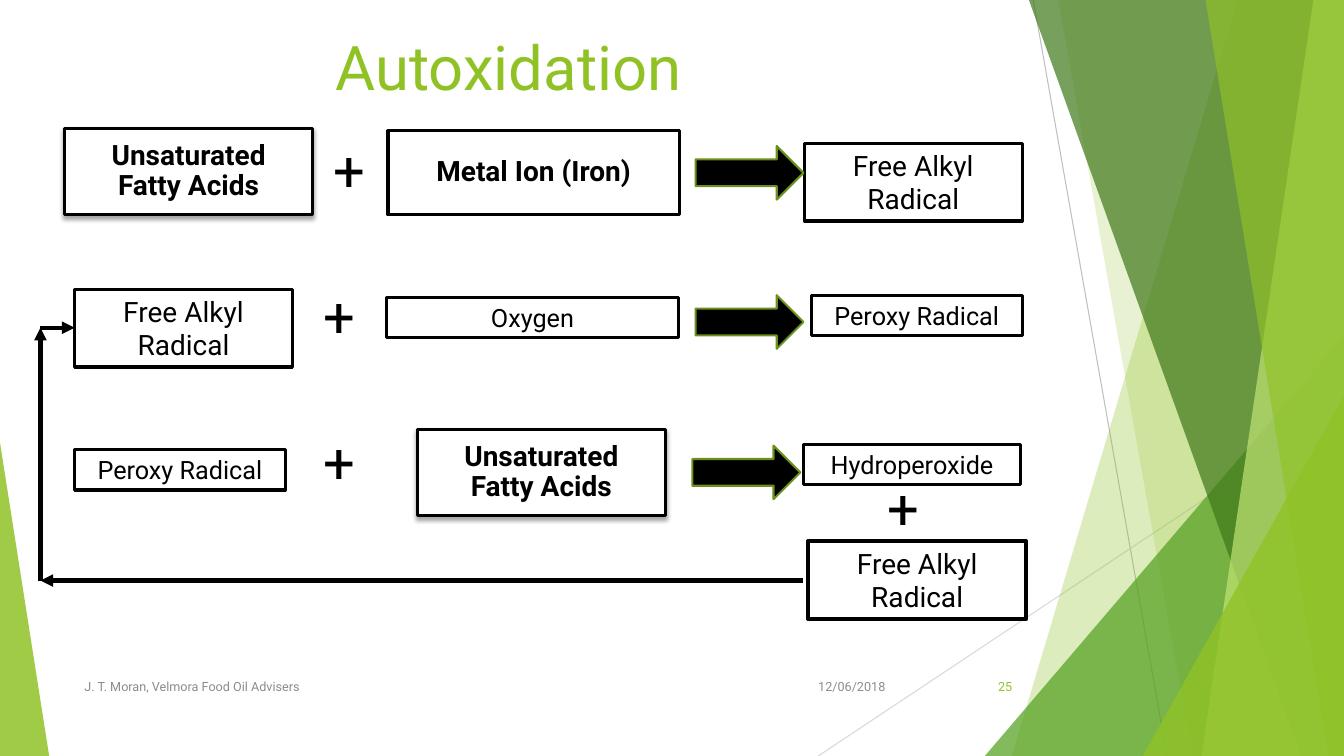
from lxml.etree import SubElement as Sub
from pptx import Presentation
from pptx.dml.color import RGBColor as Rgb
from pptx.enum.shapes import MSO_CONNECTOR as Link, MSO_SHAPE as Form
from pptx.enum.text import MSO_ANCHOR as Anchor, PP_ALIGN as Align
from pptx.oxml.ns import qn
from pptx.util import Cm, Pt

WIDE, HIGH = 33.87, 19.05
BLACK, WHITE, GREEN, GREY = "000000", "FFFFFF", "90C226", "8C8C8C"


def paint(part, tone, alpha=100):
    part.solid()
    part.fore_color.rgb = Rgb.from_string(tone)
    if alpha < 100:
        node = part._xPr.find(qn("a:solidFill"))[0]
        Sub(node, qn("a:alpha"), val=str(alpha * 1000))


def edge(line, tone, width):
    paint(line.fill, tone)
    line.width = Pt(width)


def place(slide, form, spot):
    shape = slide.shapes.add_shape(form, *map(Cm, spot))
    shape.shadow.inherit = False
    return shape


def write(shape, text, size, tone=BLACK, bold=False, align=Align.CENTER, anchor=Anchor.TOP):
    frame = shape.text_frame
    frame.text = text
    frame.word_wrap = True
    frame.vertical_anchor = anchor
    para = frame.paragraphs[0]
    para.alignment = align
    font = para.runs[0].font
    font.name, font.size, font.bold = "Roboto", Pt(size), bold
    font.color.rgb = Rgb.from_string(tone)


def label(slide, text, spot, size, tone=BLACK, align=Align.LEFT, anchor=Anchor.TOP):
    shape = slide.shapes.add_textbox(*map(Cm, spot))
    write(shape, text, size, tone, align=align, anchor=anchor)


def box(slide, text, spot, size=20, width=2.25, tone=BLACK, rim=BLACK):
    shape = place(slide, Form.RECTANGLE, spot)
    paint(shape.fill, WHITE)
    edge(shape.line, rim, width)
    write(shape, text, size, tone)
    return shape


def bold_box(slide, text, spot, shade=True):
    shape = box(slide, text, spot)
    write(shape, text, 20, bold=True, anchor=Anchor.MIDDLE)
    frame = shape.text_frame
    frame.margin_left = frame.margin_right = Cm(0.41)
    frame.margin_top = frame.margin_bottom = Cm(0.41)
    frame.paragraphs[0].line_spacing = 0.9
    if shade:
        list_ = shape._element.spPr.find(qn("a:effectLst"))
        cast = Sub(list_, qn("a:outerShdw"), blurRad=str(Pt(3)), dist=str(Pt(2)),
                   dir="5400000", rotWithShape="0")
        tint = Sub(cast, qn("a:srgbClr"), val=BLACK)
        Sub(tint, qn("a:alpha"), val="35000")


def plus(slide, left, top):
    label(slide, "+", (left, top, 0.99, 1.96), 40)


def arrow(slide, left, top):
    shape = place(slide, Form.RIGHT_ARROW, (left, top, 2.72, 1.35))
    paint(shape.fill, BLACK)
    edge(shape.line, "6B901C", 1.5)


def rule(slide, start, end, tone, width, head=False):
    line = slide.shapes.add_connector(Link.STRAIGHT, *map(Cm, start + end))
    edge(line.line, tone, width)
    if head:
        Sub(line.line._get_or_add_ln(), qn("a:tailEnd"), type="triangle")
    Sub(line._element.spPr, qn("a:effectLst"))


def shard(slide, top, base, tone, alpha):
    pen = slide.shapes.build_freeform(Cm(top), Cm(0))
    ends = [(WIDE, 0), (WIDE, HIGH), (base, HIGH)]
    pen.add_line_segments([(Cm(x), Cm(y)) for x, y in ends])
    shape = pen.convert_to_shape()
    shape.shadow.inherit = False
    paint(shape.fill, tone, alpha)
    shape.line.fill.background()


def wedge(slide, left, top, width, peak, tone, alpha):
    shape = place(slide, Form.ISOSCELES_TRIANGLE, (left, top, width, HIGH - top))
    shape.adjustments[0] = peak
    paint(shape.fill, tone, alpha)
    shape.line.fill.background()


def backdrop(slide):
    rule(slide, (26.04, 0), (29.41, HIGH), "BFBFBF", 0.75)
    rule(slide, (WIDE, 10.24), (20.62, HIGH), "D9D9D9", 0.75)
    shard(slide, 31.19, 25.5, GREEN, 30)
    shard(slide, 26.67, 30.05, GREEN, 20)
    wedge(slide, 24.82, 8.46, 9.05, 1, "54A021", 72)
    shard(slide, 25.93, 32.79, "3F7819", 70)
    shard(slide, 33.1, 30.28, "C0E474", 70)
    shard(slide, 30.38, 33.48, GREEN, 65)
    wedge(slide, 28.8, 9.98, 5.07, 1, GREEN, 80)
    wedge(slide, 0, 11.15, 1.24, 0, GREEN, 85)


def footer(slide):
    for text, left, width, tone, align in [
        ("12/06/2018", 20.02, 2.54, GREY, Align.RIGHT),
        ("J. T. Moran, Velmora Food Oil Advisers", 1.88, 17.5, GREY, Align.LEFT),
        ("25", 23.85, 1.91, GREEN, Align.RIGHT),
    ]:
        label(slide, text, (left, 16.79, width, 1.02), 9, tone, align, Anchor.MIDDLE)


def steps(slide):
    for left, top in [(1.63, 3.23), (10.52, 10.82)]:
        bold_box(slide, "Unsaturated Fatty Acids", (left, top, 6.25, 2.18))
    bold_box(slide, "Metal Ion (Iron)", (9.78, 3.3, 7.34, 2.11), False)
    for left, top, width in [(20.27, 3.61, 2.25), (1.88, 7.29, 2.25), (20.37, 13.64, 3)]:
        box(slide, "Free Alkyl Radical", (left, top, 5.49, 1.96), width=width)
    for text, left, top, width in [
        ("Oxygen", 9.75, 7.49, 7.34),
        ("Peroxy Radical", 20.45, 7.44, 5.31),
        ("Peroxy Radical", 1.88, 11.33, 5.31),
        ("Hydroperoxide", 20.24, 11.2, 5.49),
    ]:
        box(slide, text, (left, top, width, 1.02), 18)
    for left, top in [(8.15, 3.3), (7.9, 6.96), (7.9, 10.64), (22.12, 11.81)]:
        plus(slide, left, top)
    for left, top in [(17.53, 3.68), (17.53, 7.44), (17.45, 11.23)]:
        arrow(slide, left, top)


def loop(slide):
    stops = [(20.24, 14.63), (1.02, 14.63), (1.02, 8.26), (1.88, 8.26)]
    for start, end in zip(stops, stops[1:]):
        rule(slide, start, end, BLACK, 3, True)


def main():
    deck = Presentation()
    deck.slide_width, deck.slide_height = Cm(WIDE), Cm(HIGH)
    slide = deck.slides.add_slide(deck.slide_layouts[6])
    backdrop(slide)
    footer(slide)
    steps(slide)
    loop(slide)
    box(slide, "Autoxidation", (5.16, 0.61, 15.32, 2.13), 44, 3, GREEN, WHITE)
    deck.save("out.pptx")


if __name__ == "__main__":
    main()
